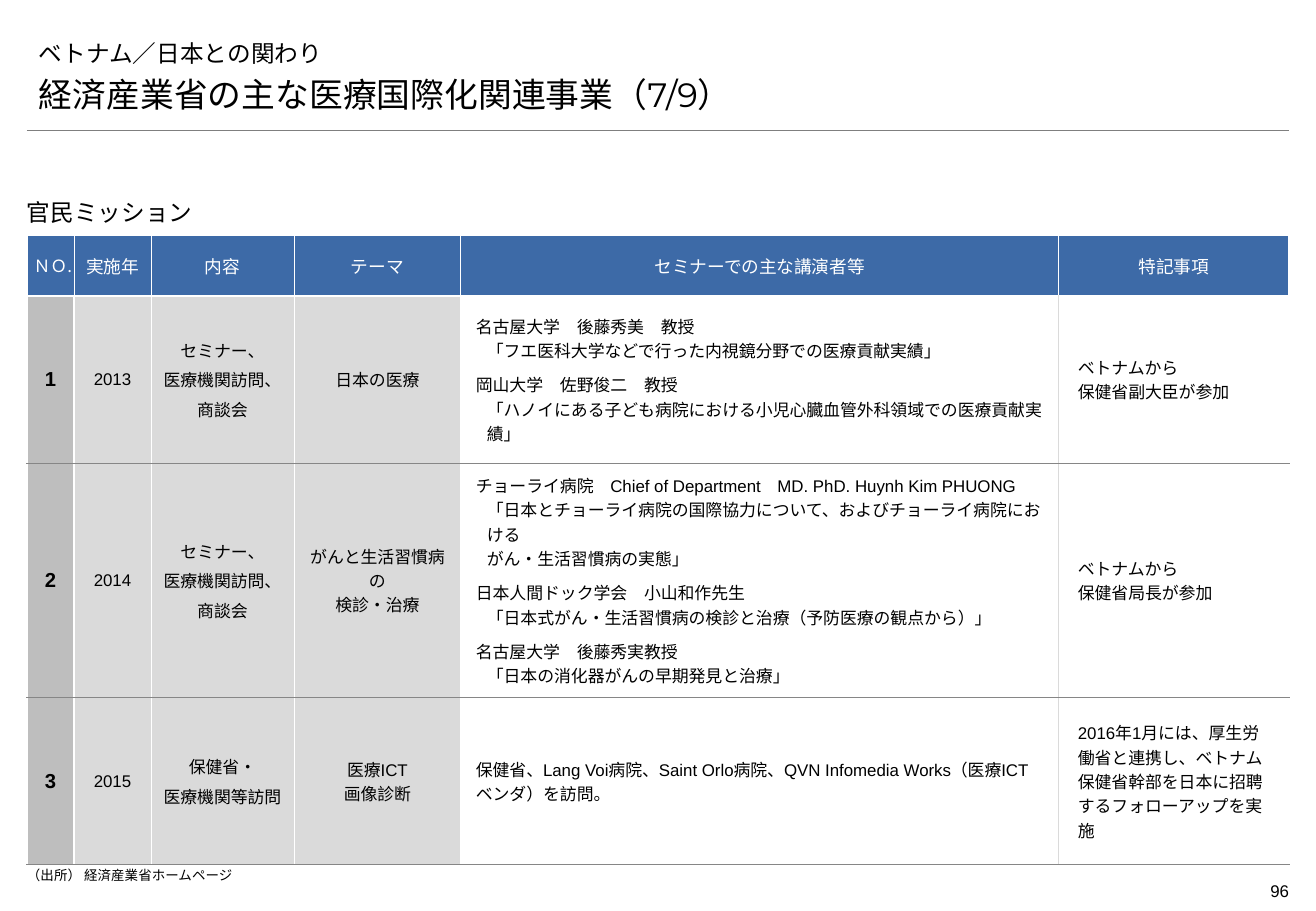
from copy import deepcopy

from pptx import Presentation
from pptx.dml.color import RGBColor
from pptx.enum.shapes import MSO_CONNECTOR
from pptx.enum.text import MSO_ANCHOR, MSO_AUTO_SIZE, PP_ALIGN
from pptx.oxml import parse_xml
from pptx.oxml.ns import nsdecls, qn
from pptx.oxml.xmlchemy import OxmlElement
from pptx.util import Pt

PX = 7526
SLIDE_SIZE = (1316, 911)
LEFT, RIGHT = 27, 1289
CJK = "Noto Sans CJK JP"
BLACK, WHITE, BLUE = "000000", "FFFFFF", "3D6AA7"
DARK, LIGHT, RULE = "BEBEBE", "DADADA", "868686"

TITLE = "ベトナム／日本との関わり"
TITLE_BOX = (LEFT, 26, 1262, 47)
TEXTS = [
    {"text": "経済産業省の主な医療国際化関連事業（7/9）", "box": (LEFT, 73, 1263, 47),
     "insets": (12, 6, 12, 6), "size": 20, "font": "Montserrat", "anchor": MSO_ANCHOR.BOTTOM},
    {"text": "官民ミッション", "box": (LEFT, 188, 1263, 48),
     "insets": (0, 6, 0, 10), "size": 14, "font": "Montserrat", "anchor": MSO_ANCHOR.BOTTOM},
    {"text": "（出所） 経済産業省ホームページ", "box": (LEFT, 867, 1148, 19),
     "insets": (0, 0, 0, 0), "size": 8},
    {"text": "96", "box": (1194, 875, 95, 33),
     "insets": (0, 6, 0, 6), "size": 10, "align": PP_ALIGN.RIGHT},
]

TABLE_TOP, DIVIDER_Y = 235, 130
ROW_HEIGHTS = [61, 167, 234, 167]
HEADERS = ["ＮＯ.", "実施年", "内容", "テーマ", "セミナーでの主な講演者等", "特記事項"]
COLUMNS = [
    {"width": 47, "fill": DARK, "insets": (5, 4), "size": 12, "bold": True, "edge": None},
    {"width": 77, "fill": LIGHT, "insets": (5, 4), "edge": WHITE},
    {"width": 143, "fill": LIGHT, "insets": (10, 4), "edge": WHITE, "before": 3},
    {"width": 167, "fill": LIGHT, "insets": (10, 4), "edge": WHITE},
    {"width": 598, "fill": WHITE, "insets": (15, 10), "edge": LIGHT, "align": PP_ALIGN.LEFT},
    {"width": 230, "fill": WHITE, "insets": (19, 10), "edge": None, "align": PP_ALIGN.LEFT},
]
SEMINAR = ["セミナー、", "医療機関訪問、", "商談会"]
MISSIONS = [
    [["1"], ["2013"], SEMINAR, ["日本の医療"],
     ["名古屋大学　後藤秀美　教授",
      "「フエ医科大学などで行った内視鏡分野での医療貢献実績」",
      "岡山大学　佐野俊二　教授",
      "「ハノイにある子ども病院における小児心臓血管外科領域での医療貢献実績」"],
     ["ベトナムから\n保健省副大臣が参加"]],
    [["2"], ["2014"], SEMINAR, ["がんと生活習慣病の", "検診・治療"],
     ["チョーライ病院　Chief of Department　MD. PhD. Huynh Kim PHUONG",
      "「日本とチョーライ病院の国際協力について、およびチョーライ病院における\nがん・生活習慣病の実態」",
      "日本人間ドック学会　小山和作先生",
      "「日本式がん・生活習慣病の検診と治療（予防医療の観点から）」",
      "名古屋大学　後藤秀実教授",
      "「日本の消化器がんの早期発見と治療」"],
     ["ベトナムから\n保健省局長が参加"]],
    [["3"], ["2015"], ["保健省・", "医療機関等訪問"], ["医療ICT", "画像診断"],
     ["保健省、Lang Voi病院、Saint Orlo病院、QVN Infomedia Works（医療ICTベンダ）を訪問。"],
     ["2016年1月には、厚生労働省と連携し、ベトナム保健省幹部を日本に招聘するフォローアップを実施"]],
]


def px(*values):
    return [value * PX for value in values]


def color(value):
    return RGBColor.from_string(value)


def assign(target, values):
    for name, value in values.items():
        setattr(target, name, value)


def margins(left, top, right, bottom):
    names = ("margin_left", "margin_top", "margin_right", "margin_bottom")
    return dict(zip(names, px(left, top, right, bottom)))


def write(paragraph, text, size=10, font="Arial", fill=BLACK, bold=False, align=PP_ALIGN.LEFT):
    paragraph.text = text
    paragraph.alignment = align
    for run in paragraph.runs:
        assign(run.font, {"size": Pt(size), "name": font, "bold": bold})
        run.font.color.rgb = color(fill)
        east_asian = OxmlElement("a:ea")
        east_asian.set("typeface", CJK)
        run.font._element.find(qn("a:latin")).addnext(east_asian)
    for line_break in paragraph._p.findall(qn("a:br")):
        line_break.append(deepcopy(paragraph.runs[0].font._element))


def add_text(slide, text, box, insets, anchor=MSO_ANCHOR.TOP, **style):
    frame = slide.shapes.add_textbox(*px(*box)).text_frame
    assign(frame, {"word_wrap": True, "vertical_anchor": anchor, **margins(*insets)})
    write(frame.paragraphs[0], text, **style)


def add_border(cell, side, value):
    line = parse_xml(
        f'<a:{side} {nsdecls("a")} w="6350"><a:solidFill><a:srgbClr val="{value}"/>'
        f'</a:solidFill></a:{side}>')
    cell.fill._xPr.find(qn("a:solidFill")).addprevious(line)


def format_cell(cell, fill, insets, borders):
    horizontal, vertical = insets
    assign(cell, {"vertical_anchor": MSO_ANCHOR.MIDDLE,
                  **margins(horizontal, vertical, horizontal, vertical)})
    cell.fill.solid()
    cell.fill.fore_color.rgb = color(fill)
    for side, value in borders.items():
        if value:
            add_border(cell, side, value)


def fill_cell(cell, lines, column):
    style = {"align": PP_ALIGN.CENTER,
             **{key: column[key] for key in ("size", "bold", "align") if key in column}}
    for index, text in enumerate(lines):
        paragraph = cell.text_frame.paragraphs[0] if index == 0 else cell.text_frame.add_paragraph()
        write(paragraph, text, **style)
        if index and "before" in column:
            paragraph.space_before = Pt(column["before"])
        if text.startswith("「"):
            properties = paragraph._p.get_or_add_pPr()
            properties.set("marL", str(11 * PX))
            properties.set("indent", "0")
            if index < len(lines) - 1:
                paragraph.space_after = Pt(6)


def add_missions(slide):
    widths = [column["width"] for column in COLUMNS]
    frame = slide.shapes.add_table(
        len(ROW_HEIGHTS), len(COLUMNS), *px(LEFT, TABLE_TOP, sum(widths), sum(ROW_HEIGHTS)))
    table = frame.table
    table.horz_banding = False
    for row, height in zip(table.rows, ROW_HEIGHTS):
        row.height = height * PX
    for index, (column, header) in enumerate(zip(COLUMNS, HEADERS)):
        table.columns[index].width = column["width"] * PX
        left_edge = COLUMNS[index - 1]["edge"] if index else None
        cell = table.cell(0, index)
        format_cell(cell, BLUE, (5, 6), {"lnL": WHITE if index else None, "lnR": WHITE})
        write(cell.text_frame.paragraphs[0], header, size=10.5 if index else 10,
              font=CJK, fill=WHITE, align=PP_ALIGN.CENTER)
        for number, mission in enumerate(MISSIONS, 1):
            cell = table.cell(number, index)
            format_cell(cell, column["fill"], column["insets"],
                        {"lnL": left_edge, "lnR": column["edge"],
                         "lnT": RULE if number > 1 else None, "lnB": RULE})
            fill_cell(cell, mission[index], column)


def main():
    """Build the slide listing the public-private missions to Vietnam."""
    presentation = Presentation()
    presentation.slide_width, presentation.slide_height = px(*SLIDE_SIZE)
    slide = presentation.slides.add_slide(presentation.slide_layouts[5])
    title = slide.shapes.title
    assign(title, dict(zip(("left", "top", "width", "height"), px(*TITLE_BOX))))
    assign(title.text_frame, {"vertical_anchor": MSO_ANCHOR.BOTTOM, "word_wrap": True,
                              "auto_size": MSO_AUTO_SIZE.NONE, **margins(12, 6, 12, 6)})
    write(title.text_frame.paragraphs[0], TITLE, size=14, font=CJK)
    divider = slide.shapes.add_connector(
        MSO_CONNECTOR.STRAIGHT, *px(LEFT, DIVIDER_Y, RIGHT, DIVIDER_Y))
    divider.line.color.rgb = color("7F7F7F")
    divider.line.width = Pt(0.25)
    divider._element.spPr.append(OxmlElement("a:effectLst"))
    add_missions(slide)
    for text in TEXTS:
        add_text(slide, **text)
    presentation.save("out.pptx")


if __name__ == "__main__":
    main()
